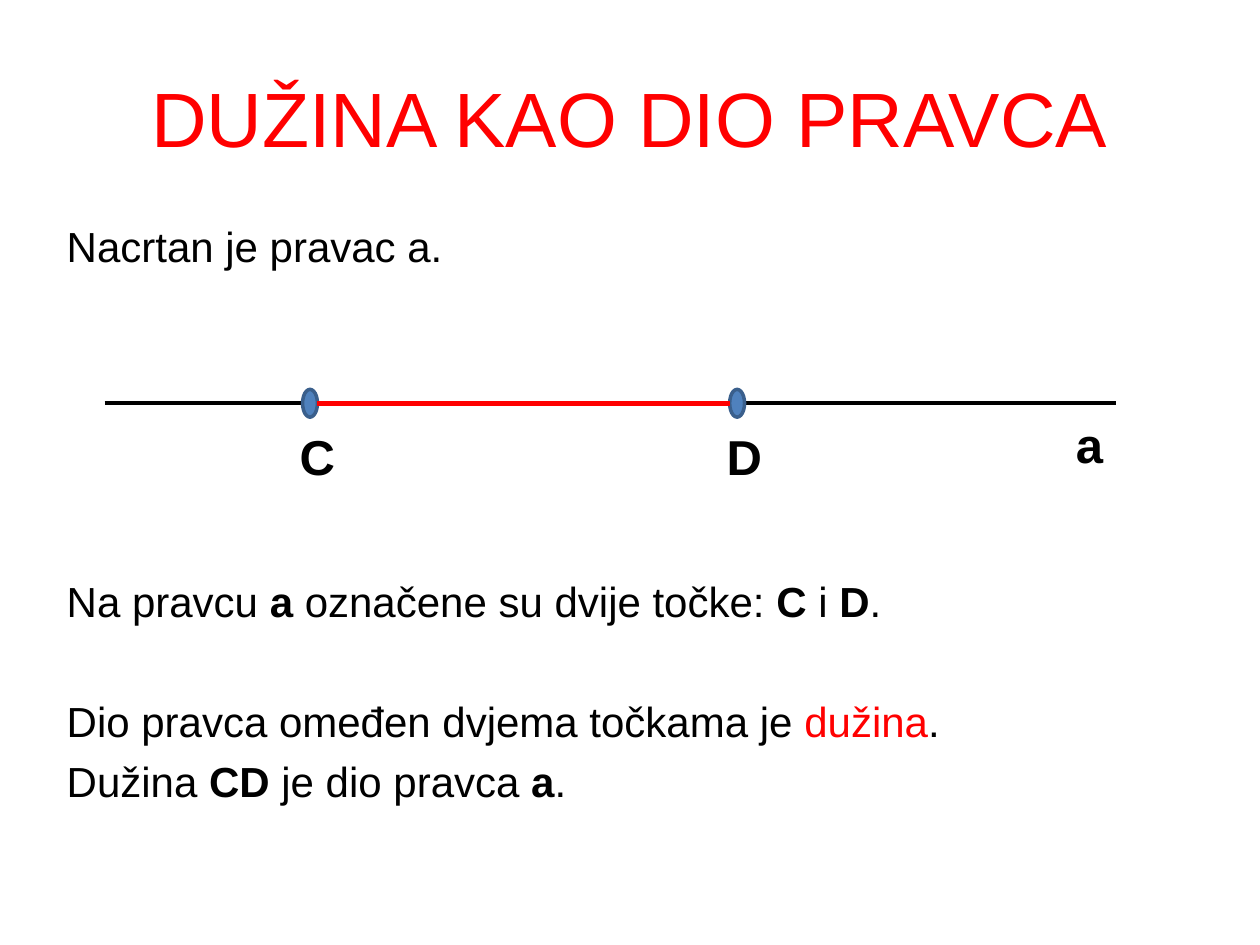
from dataclasses import dataclass

from lxml.etree import SubElement
from pptx import Presentation
from pptx.dml.color import RGBColor
from pptx.enum.shapes import MSO_CONNECTOR, MSO_SHAPE
from pptx.enum.text import MSO_ANCHOR, MSO_AUTO_SIZE, PP_ALIGN
from pptx.oxml.ns import qn
from pptx.util import Cm, Pt


@dataclass(frozen=True)
class Theme:
    """Colours, font and type sizes of the slide."""
    font: str = "Arial"
    ink: RGBColor = RGBColor(0x00, 0x00, 0x00)
    accent: RGBColor = RGBColor(0xFF, 0x00, 0x00)
    point_fill: RGBColor = RGBColor(0x4F, 0x81, 0xBD)
    point_edge: RGBColor = RGBColor(0x3A, 0x5F, 0x8C)
    title_size: float = 44
    body_size: float = 24
    label_size: float = 28


@dataclass(frozen=True)
class Box:
    """A region of the slide in centimetres."""
    left: float
    top: float
    width: float
    height: float

    def place(self, shape):
        """Move and size a shape to fill the box."""
        shape.left, shape.top = Cm(self.left), Cm(self.top)
        shape.width, shape.height = Cm(self.width), Cm(self.height)


THEME = Theme()
STATEMENTS = [
    (5.5, [("Nacrtan je pravac a.", "")]),
    (174, [("Na pravcu ", ""), ("a", "bold"), (" označene su dvije točke: ", ""),
           ("C", "bold"), (" i ", ""), ("D", "bold"), (".", "")]),
    (39.5, [("Dio pravca omeđen dvjema točkama je ", ""),
            ("dužina", "accent"), (".", "")]),
    (5.5, [("Dužina ", ""), ("CD", "bold"), (" je dio pravca ", ""),
           ("a", "bold"), (".", "")]),
]


def add_run(paragraph, words, size, color=THEME.ink, bold=False):
    """Append one formatted run to a paragraph."""
    run = paragraph.add_run()
    run.text = words
    run.font.name = THEME.font
    run.font.size = Pt(size)
    run.font.bold = bold
    run.font.color.rgb = color


def add_title(slide, box):
    """Fill the title placeholder."""
    box.place(slide.shapes.title)
    frame = slide.shapes.title.text_frame
    frame.vertical_anchor = MSO_ANCHOR.MIDDLE
    heading = frame.paragraphs[0]
    heading.alignment = PP_ALIGN.CENTER
    add_run(heading, "DUŽINA KAO DIO PRAVCA", THEME.title_size, THEME.accent)


def add_statements(slide, box):
    """Fill the body placeholder, leaving room for the drawing."""
    body = slide.placeholders[1]
    box.place(body)
    frame = body.text_frame
    frame.auto_size = MSO_AUTO_SIZE.NONE
    for index, (space_before, parts) in enumerate(STATEMENTS):
        statement = frame.add_paragraph() if index else frame.paragraphs[0]
        statement.space_before = Pt(space_before)
        properties = statement._p.get_or_add_pPr()
        properties.set("marL", "0")
        properties.set("indent", "0")
        SubElement(properties, qn("a:buNone"))
        for words, style in parts:
            color = THEME.accent if style == "accent" else THEME.ink
            add_run(statement, words, THEME.body_size, color, style == "bold")


def add_line(slide, start, end, level, color, weight):
    """Draw a horizontal line without a shadow."""
    line = slide.shapes.add_connector(
        MSO_CONNECTOR.STRAIGHT, Cm(start), Cm(level), Cm(end), Cm(level))
    line.line.color.rgb = color
    line.line.width = Pt(weight)
    SubElement(line._element.spPr, qn("a:effectLst"))


def add_label(slide, name, left, top, width):
    """Write a bold name in a box of its own."""
    label = slide.shapes.add_textbox(Cm(left), Cm(top), Cm(width), Cm(1.45))
    label.text_frame.word_wrap = False
    label.text_frame.auto_size = MSO_AUTO_SIZE.SHAPE_TO_FIT_TEXT
    add_run(label.text_frame.paragraphs[0], name, THEME.label_size, bold=True)


def add_point(slide, left, level, width, height):
    """Draw a point centred on the line."""
    point = slide.shapes.add_shape(
        MSO_SHAPE.FLOWCHART_CONNECTOR,
        Cm(left), Cm(level - height / 2), Cm(width), Cm(height))
    point.shadow.inherit = False
    point.fill.solid()
    point.fill.fore_color.rgb = THEME.point_fill
    point.line.color.rgb = THEME.point_edge
    point.line.width = Pt(2)


def add_drawing(slide, box):
    """Draw line a with points C and D and the segment between them."""
    level = box.top + box.height / 2
    right = box.left + box.width
    point_width = 0.3
    point_c, point_d = box.left + 3.99, box.left + 12.6
    add_line(slide, box.left, right, level, THEME.ink, 2.25)
    add_label(slide, "a", right - 1.06, level + 0.1, 1.04)
    for name, left, width in (("C", point_c, 1.14), ("D", point_d, 1.24)):
        add_point(slide, left, level, point_width, box.height)
        add_label(slide, name, left - 0.31, level + 0.35, width)
    add_line(slide, point_c + point_width, point_d, level, THEME.accent, 3)


def main():
    """Build and save the slide."""
    deck = Presentation()
    deck.slide_width, deck.slide_height = Cm(25.4), Cm(19.05)
    slide = deck.slides.add_slide(deck.slide_layouts[1])
    add_title(slide, Box(1.27, 0.76, 22.86, 3.18))
    add_statements(slide, Box(1.09, 4.32, 22.86, 12.57))
    add_drawing(slide, Box(2.11, 7.85, 20.39, 0.56))
    deck.save("out.pptx")


if __name__ == "__main__":
    main()
